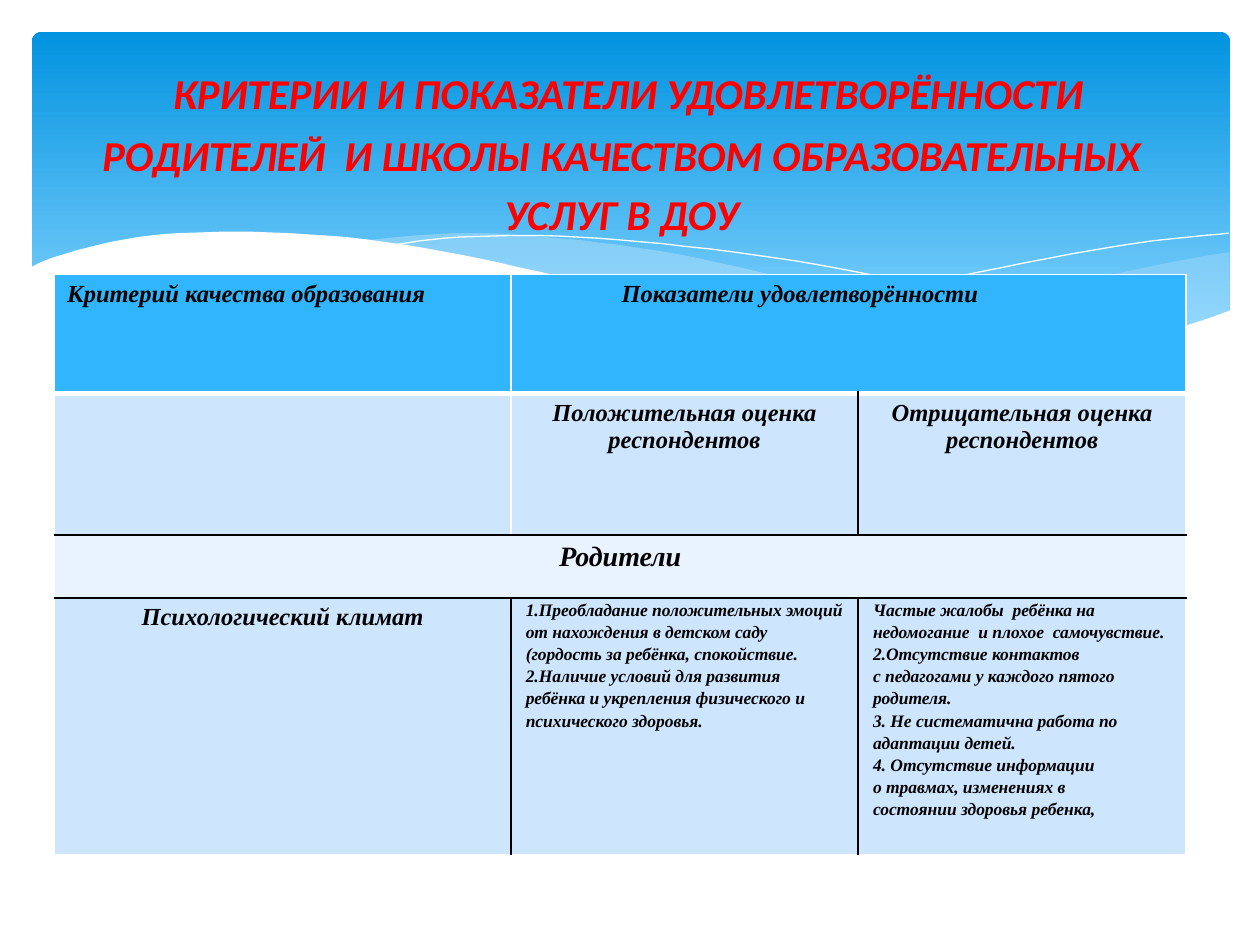
from lxml.etree import SubElement
from pptx import Presentation
from pptx.dml.color import RGBColor
from pptx.enum.shapes import MSO_SHAPE as Shape
from pptx.enum.text import MSO_ANCHOR as Anchor, PP_ALIGN as Align
from pptx.oxml.ns import qn
from pptx.util import Cm, Pt

TITLE = "КРИТЕРИИ И ПОКАЗАТЕЛИ УДОВЛЕТВОРЁННОСТИ РОДИТЕЛЕЙ  И ШКОЛЫ КАЧЕСТВОМ ОБРАЗОВАТЕЛЬНЫХ УСЛУГ В ДОУ"
TITLE_FONT = {"name": "Calibri", "bold": True, "italic": True}
CELL_FONT = {"name": "Times New Roman", "bold": True, "italic": True}
RED, BLACK, WHITE = "FF0000", "000000", "FFFFFF"
HEADER, BAND, LIGHT, WAVE = "31B6FD", "CEE5FE", "E8F3FF", "C6E7FC"
SKY = [(0, "0293E0"), (0.9, "83D3FE")]

POSITIVE = [
    "1.Преобладание положительных эмоций от нахождения в детском саду (гордость за ребёнка, спокойствие.",
    "2.Наличие условий для развития ребёнка и укрепления физического и психического здоровья.",
]
NEGATIVE = [
    "Частые жалобы  ребёнка на",
    "недомогание  и плохое  самочувствие.",
    "2.Отсутствие контактов",
    "с педагогами у каждого пятого",
    "родителя.",
    "3. Не систематична работа по",
    "адаптации детей.",
    "4. Отсутствие информации",
    "о травмах, изменениях в",
    "состоянии здоровья ребенка,",
]
HEAD = {"size": 14}
CENTER = {"size": 14, "align": Align.CENTER}
GROUP = {"size": 16, "align": Align.CENTER}
DETAIL = {"size": 10, "spacing": 1.15,
          "margins": {"margin_left": 0.3, "margin_right": 0.3, "margin_top": 0, "margin_bottom": 0}}
INDENTED = {"size": 14, "margins": {"margin_left": 2.23}}
CELLS = {
    (0, 0): (["Критерий качества образования"], HEAD),
    (0, 1): (["Показатели удовлетворённости"], INDENTED),
    (1, 1): (["Положительная оценка респондентов"], CENTER),
    (1, 2): (["Отрицательная оценка респондентов"], CENTER),
    (2, 0): (["Родители"], GROUP),
    (3, 0): (["Психологический климат"], CENTER),
    (3, 1): (POSITIVE, DETAIL),
    (3, 2): (NEGATIVE, DETAIL),
}
MERGES = [((0, 1), (0, 2)), ((2, 0), (2, 2))]
COLS = [9.2, 7.0, 6.61]
ROWS = [2.4, 2.85, 1.27, 5.18]
FILLS = [HEADER, BAND, LIGHT, BAND]
ROW_EDGES = [(WHITE, 1), (WHITE, 3), (BLACK, 1), (BLACK, 1), (WHITE, 1)]
COL_EDGES = [
    [WHITE] * 4,
    [WHITE, WHITE, BLACK, WHITE],
    [WHITE] * 4,
    [WHITE, BLACK, BLACK, WHITE],
]

WAVES = [
    {"fill": WAVE, "alpha": 29, "curves": [
        [(24.79, 5.08), (23.75, 5.26), (21.87, 5.66), (19.13, 6.3), (16.79, 6.73)],
        [(16.79, 6.73), (17.91, 6.88), (19.23, 7.01), (20.4, 7.06), (21.69, 7.01),
         (22.78, 6.86), (23.93, 6.58), (24.79, 6.27)]]},
    {"fill": WAVE, "alpha": 40, "curves": [
        [(22.68, 6.93), (20.5, 6.6), (17.93, 6.1), (15.98, 5.64), (14.1, 5.21),
         (12.42, 4.93), (10.67, 4.75), (9.17, 4.7), (7.26, 4.85)],
        [(7.26, 4.85), (8.69, 5.05), (10.26, 5.36), (12.47, 5.89), (14.83, 6.4),
         (16.89, 6.76), (18.69, 6.99), (20.5, 7.06), (21.77, 7.04), (22.68, 6.93)]]},
    {"line": WHITE, "curves": [
        [(7.85, 4.95), (8.97, 4.8), (10.57, 4.75), (12.42, 4.83), (14.78, 5.08),
         (16.89, 5.41), (19.3, 5.92), (21.11, 6.38), (23.04, 6.91)]]},
    {"line": WHITE, "curves": [
        [(15.57, 6.53), (17.65, 5.97), (19.71, 5.49), (22, 5.05), (23.47, 4.83), (24.77, 4.7)]]},
    {"fill": WHITE, "curves": [
        [(24.82, 6.25), (23.62, 6.65), (22.23, 6.93), (20.55, 7.04), (18.44, 6.91), (16.46, 6.65),
         (14.1, 6.22), (11.35, 5.59), (9.27, 5.13), (7.42, 4.83), (5.84, 4.7), (4.5, 4.67),
         (3.02, 4.75), (1.93, 4.95), (1.02, 5.21), (0.58, 5.41)],
        [(0.58, 8.36), (24.82, 8.36)]]},
]


def rgb(value):
    """Turn a hex string into a colour."""
    return RGBColor.from_string(value)


def assign(obj, values):
    """Set attributes from a dict."""
    for name, value in values.items():
        setattr(obj, name, value)


def smooth(points, steps=5):
    """Run a Catmull-Rom curve through the points."""
    if len(points) < 3:
        return points
    ends = [points[0], *points, points[-1]]
    curve = [points[0]]
    for a, b, c, d in zip(ends, ends[1:], ends[2:], ends[3:]):
        for t in (k / steps for k in range(1, steps + 1)):
            curve.append(tuple(
                (2 * q + (r - p) * t + (2 * p - 5 * q + 4 * r - u) * t ** 2
                 + (3 * q - p - 3 * r + u) * t ** 3) / 2
                for p, q, r, u in zip(a, b, c, d)))
    return curve


def add_text(p, text, size, color, font):
    """Add a formatted run to a paragraph."""
    r = p.add_run()
    r.text = text
    assign(r.font, {**font, "size": Pt(size)})
    r.font.color.rgb = rgb(color)


def add_sky(s):
    """Draw the rounded gradient panel."""
    sp = s.shapes.add_shape(Shape.ROUNDED_RECTANGLE, Cm(0.64), Cm(0.64), Cm(24.16), Cm(6.86))
    sp.adjustments[0] = 0.03
    sp.shadow.inherit = False
    sp.line.fill.background()
    sp.fill.gradient()
    sp.fill.gradient_angle = 270
    for stop, (position, color) in zip(sp.fill.gradient_stops, SKY):
        stop.position = position
        stop.color.rgb = rgb(color)


def add_wave(s, wave):
    """Draw one wave as a filled outline or a thin line."""
    points = [(x * 100, y * 100) for curve in wave["curves"] for x, y in smooth(curve)]
    builder = s.shapes.build_freeform(*points[0], scale=Cm(0.01))
    builder.add_line_segments(points[1:], close="fill" in wave)
    sp = builder.convert_to_shape()
    sp.shadow.inherit = False
    if "line" in wave:
        sp.fill.background()
        sp.line.color.rgb = rgb(wave["line"])
        sp.line.width = Pt(0)
        return
    sp.line.fill.background()
    sp.fill.solid()
    sp.fill.fore_color.rgb = rgb(wave["fill"])
    if "alpha" in wave:
        color = sp._element.spPr.find(qn("a:solidFill"))[0]
        SubElement(color, qn("a:alpha"), val=str(wave["alpha"] * 1000))


def set_borders(cell, edges):
    """Draw the left, right, top and bottom borders of a cell."""
    tc_pr = cell._tc.get_or_add_tcPr()
    for side, (color, width) in zip("LRTB", edges):
        ln = SubElement(tc_pr, qn(f"a:ln{side}"), w=str(Pt(width)))
        SubElement(SubElement(ln, qn("a:solidFill")), qn("a:srgbClr"), val=color)


def fill_cell(cell, lines, style):
    """Write the paragraphs of a cell."""
    assign(cell, {k: Cm(v) for k, v in style.get("margins", {}).items()})
    tf = cell.text_frame
    for i, line in enumerate(lines):
        p = tf.add_paragraph() if i else tf.paragraphs[0]
        assign(p, {"alignment": style.get("align"), "line_spacing": style.get("spacing")})
        add_text(p, line, style["size"], BLACK, CELL_FONT)


def add_criteria(s):
    """Build the table of criteria."""
    table = s.shapes.add_table(len(ROWS), len(COLS), Cm(1.1), Cm(5.53),
                               Cm(sum(COLS)), Cm(sum(ROWS))).table
    for col, width in zip(table.columns, COLS):
        col.width = Cm(width)
    for i, height in enumerate(ROWS):
        table.rows[i].height = Cm(height)
        for j in range(len(COLS)):
            cell = table.cell(i, j)
            sides = [(color, 1) for color in COL_EDGES[i][j:j + 2]]
            set_borders(cell, sides + ROW_EDGES[i:i + 2])
            cell.fill.solid()
            cell.fill.fore_color.rgb = rgb(FILLS[i])
    for first, last in MERGES:
        table.cell(*first).merge(table.cell(*last))
    for place, (lines, style) in CELLS.items():
        fill_cell(table.cell(*place), lines, style)


def add_title(s):
    """Place the title above the panel."""
    sp = s.shapes.title
    s.shapes._spTree.append(sp._element)
    assign(sp, {"left": Cm(1.1), "top": Cm(0.74), "width": Cm(22.86), "height": Cm(4.98)})
    tf = sp.text_frame
    assign(tf, {"word_wrap": True, "vertical_anchor": Anchor.TOP})
    p = tf.paragraphs[0]
    assign(p, {"alignment": Align.CENTER, "line_spacing": 1.15, "space_after": Pt(10)})
    add_text(p, " ", 32.4, RED, TITLE_FONT)
    add_text(p, TITLE, 24.3, RED, TITLE_FONT)


def main():
    """Build and save the slide."""
    prs = Presentation()
    assign(prs, {"slide_width": Cm(25.4), "slide_height": Cm(19.05)})
    s = prs.slides.add_slide(prs.slide_layouts[5])
    add_sky(s)
    for wave in WAVES:
        add_wave(s, wave)
    add_criteria(s)
    add_title(s)
    prs.save("out.pptx")


if __name__ == "__main__":
    main()
